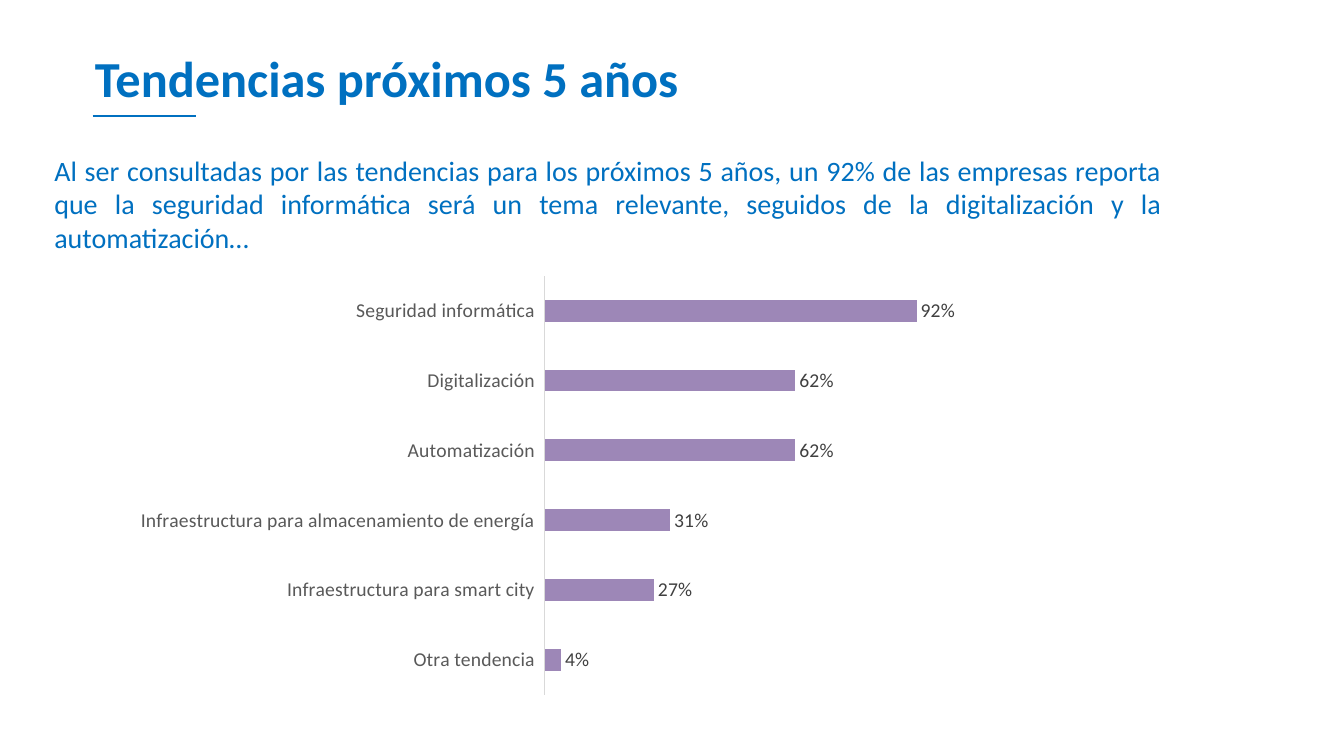
from lxml import etree
from pptx import Presentation
from pptx.chart.data import CategoryChartData
from pptx.dml.color import RGBColor
from pptx.enum.chart import XL_CHART_TYPE, XL_LABEL_POSITION, XL_TICK_LABEL_POSITION, XL_TICK_MARK
from pptx.enum.shapes import MSO_CONNECTOR
from pptx.enum.text import MSO_ANCHOR, MSO_AUTO_SIZE, PP_ALIGN
from pptx.oxml.ns import qn
from pptx.util import Inches, Pt

BLUE = RGBColor(0x00, 0x70, 0xC0)
WHITE = RGBColor(0xFF, 0xFF, 0xFF)
PURPLE = RGBColor(0x9D, 0x87, 0xB7)
BLACK = RGBColor(0x00, 0x00, 0x00)
AXIS_TEXT = RGBColor(0x59, 0x59, 0x59)
AXIS_LINE = RGBColor(0xD9, 0xD9, 0xD9)
LABEL_TEXT = RGBColor(0x40, 0x40, 0x40)
FONT = "Calibri"
BAR_CLUSTERED = XL_CHART_TYPE.BAR_CLUSTERED
OUTSIDE_END = XL_LABEL_POSITION.OUTSIDE_END
LABELS_LOW = XL_TICK_LABEL_POSITION.LOW
NO_TICKS = XL_TICK_MARK.NONE
STRAIGHT = MSO_CONNECTOR.STRAIGHT
TOP, MIDDLE = MSO_ANCHOR.TOP, MSO_ANCHOR.MIDDLE
NO_AUTOFIT = MSO_AUTO_SIZE.NONE
LEFT, JUSTIFY = PP_ALIGN.LEFT, PP_ALIGN.JUSTIFY


def style_font(font, size, color, bold=False):
    font.name = FONT
    font.size = Pt(size)
    font.bold = bold
    font.color.rgb = color


def write_text(box, text, size, align, anchor, wrap=True, bold=False):
    frame = box.text_frame
    frame.auto_size = NO_AUTOFIT
    frame.word_wrap = wrap
    frame.vertical_anchor = anchor
    para = frame.paragraphs[0]
    para.alignment = align
    para.line_spacing = 1.0
    para.space_before = Pt(0)
    span = para.add_run()
    span.text = text
    style_font(span.font, size, BLUE, bold)


deck = Presentation()
deck.slide_width = Inches(13.33)
deck.slide_height = Inches(7.5)
page = deck.slides.add_slide(deck.slide_layouts[5])

title = page.shapes.title
title.left, title.top = Inches(0.84), Inches(0.41)
title.width, title.height = Inches(6.06), Inches(0.71)
title.fill.solid()
title.fill.fore_color.rgb = WHITE
write_text(title, "Tendencias próximos 5 años", size=36, align=LEFT,
           anchor=MIDDLE, wrap=False, bold=True)

underline = page.shapes.add_connector(
    STRAIGHT, Inches(0.92), Inches(1.15), Inches(1.94), Inches(1.15))
underline.line.color.rgb = BLUE
underline.line.width = Pt(1.5)
etree.SubElement(underline._element.spPr, qn("a:effectLst"))

trends = {
    "Seguridad informática": 0.92,
    "Digitalización": 0.62,
    "Automatización": 0.62,
    "Infraestructura para almacenamiento de energía": 0.31,
    "Infraestructura para smart city": 0.27,
    "Otra tendencia": 0.04,
}
chart_data = CategoryChartData(number_format="0%")
chart_data.categories = list(trends)
chart_data.add_series("Series 1", list(trends.values()))
chart = page.shapes.add_chart(
    BAR_CLUSTERED, Inches(1.23), Inches(2.65), Inches(8.35), Inches(4.33), chart_data).chart
chart.has_legend = False
chart.has_title = False
style_font(chart.font, 14, BLACK)

category_axis = chart.category_axis
category_axis.reverse_order = True
category_axis.major_tick_mark = NO_TICKS
category_axis.minor_tick_mark = NO_TICKS
category_axis.tick_label_position = LABELS_LOW
category_axis.format.line.color.rgb = AXIS_LINE
category_axis.format.line.width = Pt(0.75)
style_font(category_axis.tick_labels.font, 14, AXIS_TEXT)

value_axis = chart.value_axis
value_axis.minimum_scale = 0
value_axis.maximum_scale = 1
value_axis.has_major_gridlines = False
value_axis.tick_labels.number_format = "0%"
value_axis.tick_labels.number_format_is_linked = False
value_axis.visible = False

plot = chart.plots[0]
plot.gap_width = 219
plot.vary_by_categories = False
bars = plot.series[0]
bars.format.fill.solid()
bars.format.fill.fore_color.rgb = PURPLE
labels = bars.data_labels
labels.show_value = True
labels.number_format = "0%"
labels.number_format_is_linked = False
labels.position = OUTSIDE_END
style_font(labels.font, 14, LABEL_TEXT)

summary = page.shapes.add_textbox(Inches(0.44), Inches(1.47), Inches(11.18), Inches(1.45))
write_text(
    summary,
    "Al ser consultadas por las tendencias para los próximos 5 años, un 92% de las empresas "
    "reporta que la seguridad informática será un tema relevante, seguidos de la "
    "digitalización y la automatización…",
    size=20, align=JUSTIFY, anchor=TOP)

deck.save("out.pptx")
